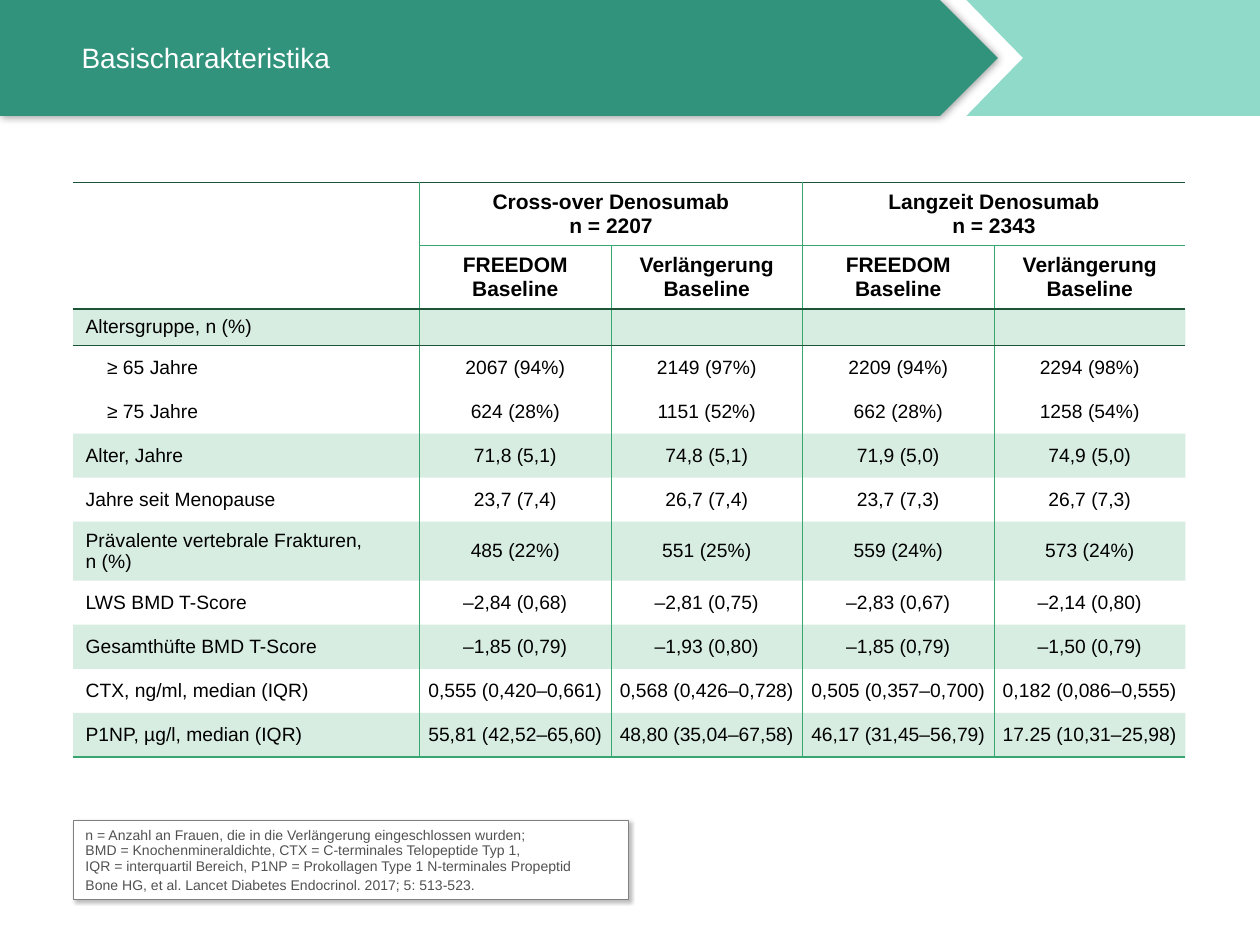
"""Build the slide on baseline characteristics of the denosumab extension groups."""
from dataclasses import dataclass

import lxml.etree
import pptx
import pptx.dml.color
import pptx.enum.shapes
import pptx.enum.text
import pptx.oxml.ns
import pptx.util

Inches = pptx.util.Inches
Pt = pptx.util.Pt
ALIGN = pptx.enum.text.PP_ALIGN
ANCHOR = pptx.enum.text.MSO_ANCHOR
SHAPE = pptx.enum.shapes.MSO_SHAPE


@dataclass(frozen=True)
class Theme:
    """Hold the colours and type sizes of the slide."""
    font: str = "Arial"
    banner: str = "31937B"
    banner_tail: str = "8FDAC8"
    white: str = "FFFFFF"
    black: str = "000000"
    note_text: str = "515151"
    note_edge: str = "808080"
    rule: str = "37A76F"
    dark_rule: str = "1C5438"
    band_opacity: int = 20
    title_size: int = 16
    header_size: int = 12
    body_size: int = 11
    note_size: int = 8


HEADERS = [
    ["", "Cross-over Denosumab\nn = 2207", "", "Langzeit Denosumab\nn = 2343", ""],
    [""] + ["FREEDOM\nBaseline", "Verlängerung\nBaseline"] * 2,
]
MEASURES = [
    ["Altersgruppe, n (%)", "", "", "", ""],
    ["≥ 65 Jahre", "2067 (94%)", "2149 (97%)", "2209 (94%)", "2294 (98%)"],
    ["≥ 75 Jahre", "624 (28%)", "1151 (52%)", "662 (28%)", "1258 (54%)"],
    ["Alter, Jahre", "71,8 (5,1)", "74,8 (5,1)", "71,9 (5,0)", "74,9 (5,0)"],
    ["Jahre seit Menopause", "23,7 (7,4)", "26,7 (7,4)", "23,7 (7,3)", "26,7 (7,3)"],
    ["Prävalente vertebrale Frakturen,\vn (%)", "485 (22%)", "551 (25%)", "559 (24%)", "573 (24%)"],
    ["LWS BMD T-Score", "–2,84 (0,68)", "–2,81 (0,75)", "–2,83 (0,67)", "–2,14 (0,80)"],
    ["Gesamthüfte BMD T-Score", "–1,85 (0,79)", "–1,93 (0,80)", "–1,85 (0,79)", "–1,50 (0,79)"],
    ["CTX, ng/ml, median (IQR)", "0,555 (0,420–0,661)", "0,568 (0,426–0,728)",
     "0,505 (0,357–0,700)", "0,182 (0,086–0,555)"],
    ["P1NP, µg/l, median (IQR)", "55,81 (42,52–65,60)", "48,80 (35,04–67,58)",
     "46,17 (31,45–56,79)", "17.25 (10,31–25,98)"],
]
BANDED_ROWS = {2, 5, 7, 9, 11}
MERGES = [((0, 0), (1, 0)), ((0, 1), (0, 2)), ((0, 3), (0, 4))]
COLUMN_WIDTHS = [2.75] + [1.52] * 4
ROW_HEIGHTS = [0.5, 0.5, 0.29] + [0.35] * 9
NOTES = (
    "n = Anzahl an Frauen, die in die Verlängerung eingeschlossen wurden;\v"
    "BMD = Knochenmineraldichte, CTX = C-terminales Telopeptide Typ 1,\v"
    "IQR = interquartil Bereich, P1NP = Prokollagen Type 1 N-terminales Propeptid\n"
    "Bone HG, et al. Lancet Diabetes Endocrinol. 2017; 5: 513-523."
)


def rgb(value):
    """Turn a hex string into a colour."""
    return pptx.dml.color.RGBColor.from_string(value)


def apply(target, values):
    """Set every attribute named in the dict."""
    for name, value in values.items():
        setattr(target, name, value)


def child(parent, tag, **attributes):
    """Append a drawing element with the given attributes."""
    texts = {name: str(value) for name, value in attributes.items()}
    return lxml.etree.SubElement(parent, pptx.oxml.ns.qn(tag), texts)


class SlideBuilder:
    """Hold the theme and current slide, and draw each kind of element."""

    def __init__(self, theme, slide):
        self.theme = theme
        self.slide = slide

    def fill_text(self, frame, text, size, color, bold=False, **paragraph_format):
        """Fill a text frame with uniformly styled paragraphs."""
        frame.text = text
        for paragraph in frame.paragraphs:
            apply(paragraph, paragraph_format)
            for run in paragraph.runs:
                apply(run.font, {"name": self.theme.font, "size": Pt(size), "bold": bold})
                run.font.color.rgb = rgb(color)
            if not paragraph.runs:
                child(paragraph._p, "a:endParaRPr", sz=size * 100)

    def paint(self, shape, fill, edge=None, shadow=None):
        """Give a shape its fill, outline and shadow."""
        shape.shadow.inherit = False
        shape.fill.solid()
        shape.fill.fore_color.rgb = rgb(fill)
        if edge:
            shape.line.color.rgb = rgb(edge)
            shape.line.width = Pt(0.25)
        else:
            shape.line.fill.background()
        if shadow:
            opacity, blur, distance, angle = shadow
            effects = shape._element.spPr.find(pptx.oxml.ns.qn("a:effectLst"))
            outer = child(effects, "a:outerShdw", blurRad=Pt(blur), dist=Pt(distance),
                          dir=angle * 60000, algn="tl", rotWithShape=0)
            color = child(outer, "a:srgbClr", val=self.theme.black)
            child(color, "a:alpha", val=opacity * 1000)

    def outline(self, points, fill):
        """Draw a closed polygon."""
        corners = [(Inches(x), Inches(y)) for x, y in points]
        builder = self.slide.shapes.build_freeform(*corners[0])
        builder.add_line_segments(corners[1:], close=True)
        self.paint(builder.convert_to_shape(), fill)

    def shape(self, preset, box, fill, edge=None, shadow=None):
        """Draw a preset shape."""
        drawn = self.slide.shapes.add_shape(preset, *map(Inches, box))
        self.paint(drawn, fill, edge, shadow)
        return drawn

    def title(self, text, box):
        """Place the slide title."""
        frame = self.slide.shapes.add_textbox(*map(Inches, box)).text_frame
        apply(frame, {"word_wrap": True, "vertical_anchor": ANCHOR.MIDDLE})
        self.fill_text(frame, text, self.theme.title_size, self.theme.white)

    def note(self, text, box):
        """Draw the framed abbreviations and citation."""
        theme = self.theme
        frame = self.shape(SHAPE.RECTANGLE, box, theme.white, theme.note_edge,
                           (25, 2, 2, 45)).text_frame
        apply(frame, {"word_wrap": True, "vertical_anchor": ANCHOR.BOTTOM})
        self.fill_text(frame, text, theme.note_size, theme.note_text, alignment=ALIGN.LEFT,
                       line_spacing=0.9, space_before=Pt(2.4))

    def borders(self, cell, row, column):
        """Rule the four sides of a cell by its place in the grid."""
        theme = self.theme
        thin, strong = (theme.rule, 0.5), (theme.dark_rule, 1)
        levels = {0: strong, 1: thin if column else None, 2: strong,
                  3: (theme.dark_rule, 0.5), len(ROW_HEIGHTS): (theme.rule, 1)}
        edges = {0: None, len(COLUMN_WIDTHS): None}
        if row == 0:
            edges.update({2: None, 4: None})
        sides = {"L": edges.get(column, thin), "R": edges.get(column + 1, thin),
                 "T": levels.get(row), "B": levels.get(row + 1)}
        properties = cell._tc.get_or_add_tcPr()
        for side, rule in sides.items():
            line = child(properties, f"a:ln{side}", w=Pt(rule[1]) if rule else 0)
            if rule:
                child(child(line, "a:solidFill"), "a:srgbClr", val=rule[0])
            else:
                child(line, "a:noFill")

    def cell(self, cell, text, row, column):
        """Style one table cell and set its text."""
        theme = self.theme
        header = row < len(HEADERS)
        self.borders(cell, row, column)
        cell.fill.solid()
        cell.fill.fore_color.rgb = rgb(theme.rule if row in BANDED_ROWS else theme.white)
        if row in BANDED_ROWS:
            color = cell._tc.tcPr.find(pptx.oxml.ns.qn("a:solidFill"))[0]
            child(color, "a:alpha", val=theme.band_opacity * 1000)
        cell.vertical_anchor = ANCHOR.MIDDLE
        if column and not header:
            apply(cell, {"margin_left": 0, "margin_right": 0})
        spacing = Pt(0 if header else 3)
        self.fill_text(cell.text_frame, text, theme.header_size if header else theme.body_size,
                       theme.black, header, alignment=ALIGN.CENTER if column else ALIGN.LEFT,
                       space_before=spacing, space_after=spacing)
        if text.startswith("≥"):
            cell.text_frame.paragraphs[0]._p.get_or_add_pPr().set("marL", str(Inches(0.17)))

    def table(self, rows, left, top):
        """Draw the table of characteristics."""
        size = (sum(COLUMN_WIDTHS), sum(ROW_HEIGHTS))
        grid = self.slide.shapes.add_table(len(rows), len(COLUMN_WIDTHS),
                                           *map(Inches, (left, top, *size))).table
        apply(grid, {"first_row": False, "horz_banding": False})
        for column, width in zip(grid.columns, COLUMN_WIDTHS):
            column.width = Inches(width)
        for row, height in zip(grid.rows, ROW_HEIGHTS):
            row.height = Inches(height)
        for start, end in MERGES:
            grid.cell(*start).merge(grid.cell(*end))
        for row, texts in enumerate(rows):
            for column, text in enumerate(texts):
                self.cell(grid.cell(row, column), text, row, column)


def main():
    """Assemble and save the presentation."""
    deck = pptx.Presentation()
    apply(deck, {"slide_width": Inches(10), "slide_height": Inches(7.5)})
    theme = Theme()
    builder = SlideBuilder(theme, deck.slides.add_slide(deck.slide_layouts[6]))
    builder.outline([(7.67, 0), (10, 0), (10, 0.92), (7.67, 0.92), (8.12, 0.46)],
                    theme.banner_tail)
    builder.shape(SHAPE.PENTAGON, (0, 0, 7.92, 0.92), theme.banner, shadow=(40, 5, 0, 0))
    builder.note(NOTES, (0.58, 6.51, 4.41, 0.63))
    builder.title("Basischarakteristika", (0.55, 0.12, 6.7, 0.67))
    builder.table(HEADERS + MEASURES, 0.58, 1.45)
    deck.save("out.pptx")


if __name__ == "__main__":
    main()
